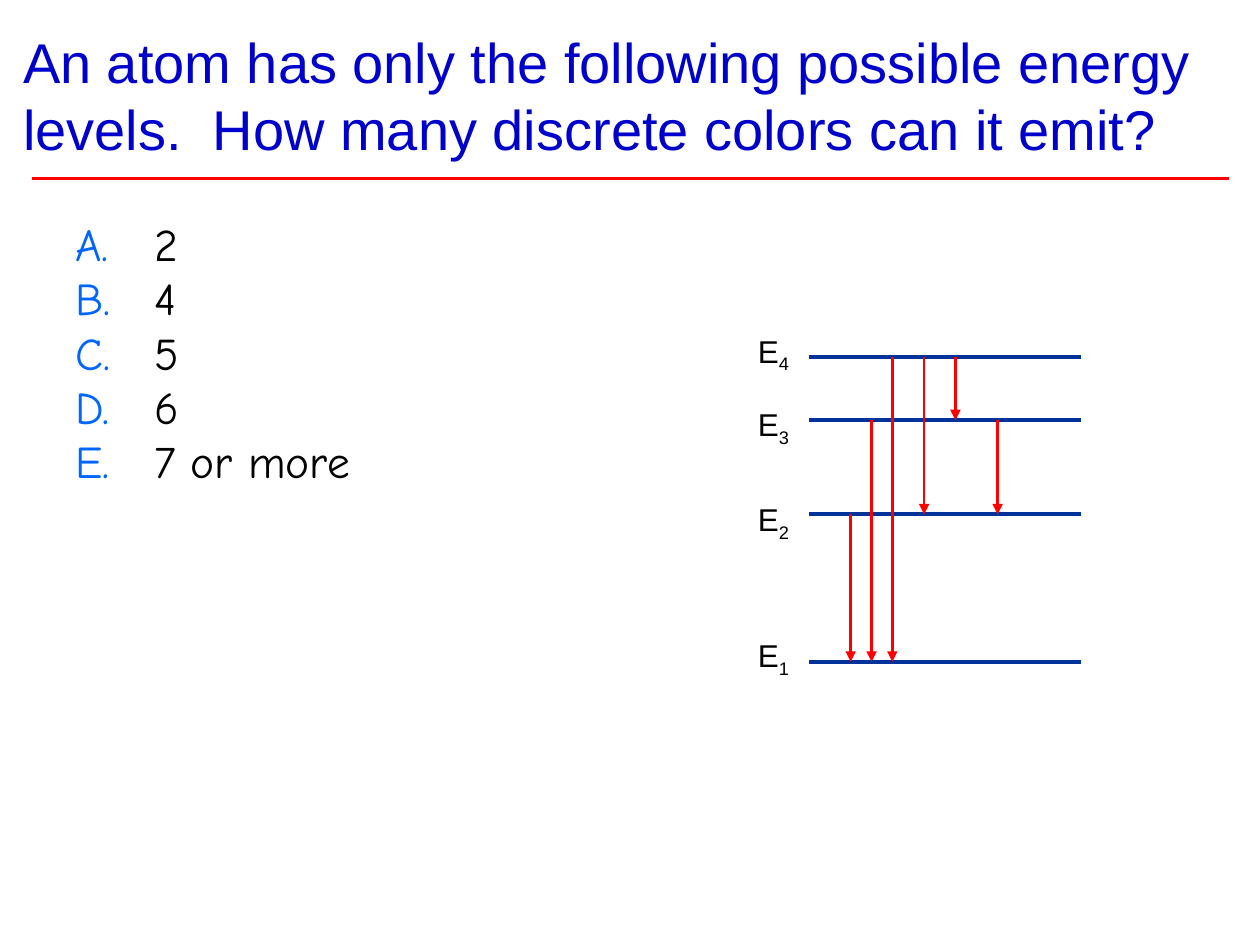
from lxml import etree
from pptx import Presentation
from pptx import util as u
from pptx.dml.color import RGBColor
from pptx.enum import shapes, text
from pptx.oxml.ns import qn

# Height of each energy level and of its label, in cm
LEVELS = {1: (13.34, 12.7), 2: (10.37, 9.95), 3: (8.47, 8.04), 4: (7.2, 6.56)}
LEVEL_LEFT, LEVEL_RIGHT = 16.3, 21.8
LABEL_LEFT = 15.03
# Horizontal position in cm, upper level, lower level
TRANSITIONS = [
    (17.15, 2, 1), (17.57, 3, 1), (17.99, 4, 1),
    (18.63, 4, 2), (19.26, 4, 3), (20.11, 3, 2),
]
ANSWERS = ["2", "4", "5", "6", "7 or more"]


def color(value):
    return RGBColor.from_string(value)


def add_run(p, content, font="Arial", size=18, fill="000000", baseline=None):
    r = p.add_run()
    r.text = content
    r.font.name, r.font.size = font, u.Pt(size)
    r.font.color.rgb = color(fill)
    if baseline is not None:
        r._r.get_or_add_rPr().set("baseline", str(baseline * 1000))


class QuizSlide:
    blue, red, navy, bullet = "0000CC", "FF0000", "003399", "0066FF"
    answer_font = "Comic Neue"

    def __init__(self, prs):
        self.s = prs.slides.add_slide(prs.slide_layouts[5])

    def title(self, content, left, top, width, height):
        sp = self.s.shapes.title
        sp.left, sp.top = u.Cm(left), u.Cm(top)
        sp.width, sp.height = u.Cm(width), u.Cm(height)
        tf = sp.text_frame
        tf.auto_size = text.MSO_AUTO_SIZE.NONE
        tf.vertical_anchor = text.MSO_ANCHOR.BOTTOM
        p = tf.paragraphs[0]
        p.alignment = text.PP_ALIGN.LEFT
        add_run(p, content, size=32, fill=self.blue)

    def line(self, x1, y1, x2, y2, stroke, width, arrow=False):
        sp = self.s.shapes.add_connector(
            shapes.MSO_CONNECTOR.STRAIGHT, u.Cm(x1), u.Cm(y1), u.Cm(x2), u.Cm(y2))
        sp.line.color.rgb = color(stroke)
        sp.line.width = u.Pt(width)
        if arrow:
            etree.SubElement(sp.line._get_or_add_ln(), qn("a:tailEnd"), type="triangle")
        etree.SubElement(sp._element.spPr, qn("a:effectLst"))

    def text_box(self, left, top, width, height, wrap=True):
        sp = self.s.shapes.add_textbox(u.Cm(left), u.Cm(top), u.Cm(width), u.Cm(height))
        sp.text_frame.word_wrap = wrap
        return sp.text_frame

    def level_label(self, number, left, top):
        tf = self.text_box(left, top, 1.17, 1.02, wrap=False)
        tf.auto_size = text.MSO_AUTO_SIZE.SHAPE_TO_FIT_TEXT
        p = tf.paragraphs[0]
        add_run(p, "E")
        add_run(p, str(number), baseline=-25)

    def answers(self, items, left, top, width, height):
        """Add a list lettered A., B., C. and so on."""
        tf = self.text_box(left, top, width, height)
        for i, item in enumerate(items):
            p = tf.add_paragraph() if i else tf.paragraphs[0]
            p.line_spacing = 0.8
            p.space_before = u.Pt(6)
            pPr = p._p.get_or_add_pPr()
            pPr.set("marL", str(u.Cm(1.59)))
            pPr.set("indent", str(-u.Cm(1.59)))
            bu_clr = etree.SubElement(pPr, qn("a:buClr"))
            etree.SubElement(bu_clr, qn("a:srgbClr"), val=self.bullet)
            etree.SubElement(pPr, qn("a:buFont"), typeface=self.answer_font)
            etree.SubElement(pPr, qn("a:buAutoNum"), type="alphaUcPeriod")
            add_run(p, item, font=self.answer_font, size=26)


def main():
    prs = Presentation()
    prs.slide_width, prs.slide_height = u.Cm(25.4), u.Cm(19.05)
    quiz = QuizSlide(prs)
    quiz.title("An atom has only the following possible energy levels.  "
               "How many discrete colors can it emit?", 0.21, 0, 24.97, 3.39)
    quiz.line(0.64, 3.6, 24.77, 3.6, quiz.red, 1.5)
    for number, (y, label_top) in LEVELS.items():
        quiz.line(LEVEL_LEFT, y, LEVEL_RIGHT, y, quiz.navy, 2.25)
        quiz.level_label(number, LABEL_LEFT, label_top)
    for x, upper, lower in TRANSITIONS:
        quiz.line(x, LEVELS[upper][0], x, LEVELS[lower][0], quiz.red, 1.5, arrow=True)
    quiz.answers(ANSWERS, 1.27, 4.45, 11.43, 6.14)
    prs.save("out.pptx")


if __name__ == "__main__":
    main()
